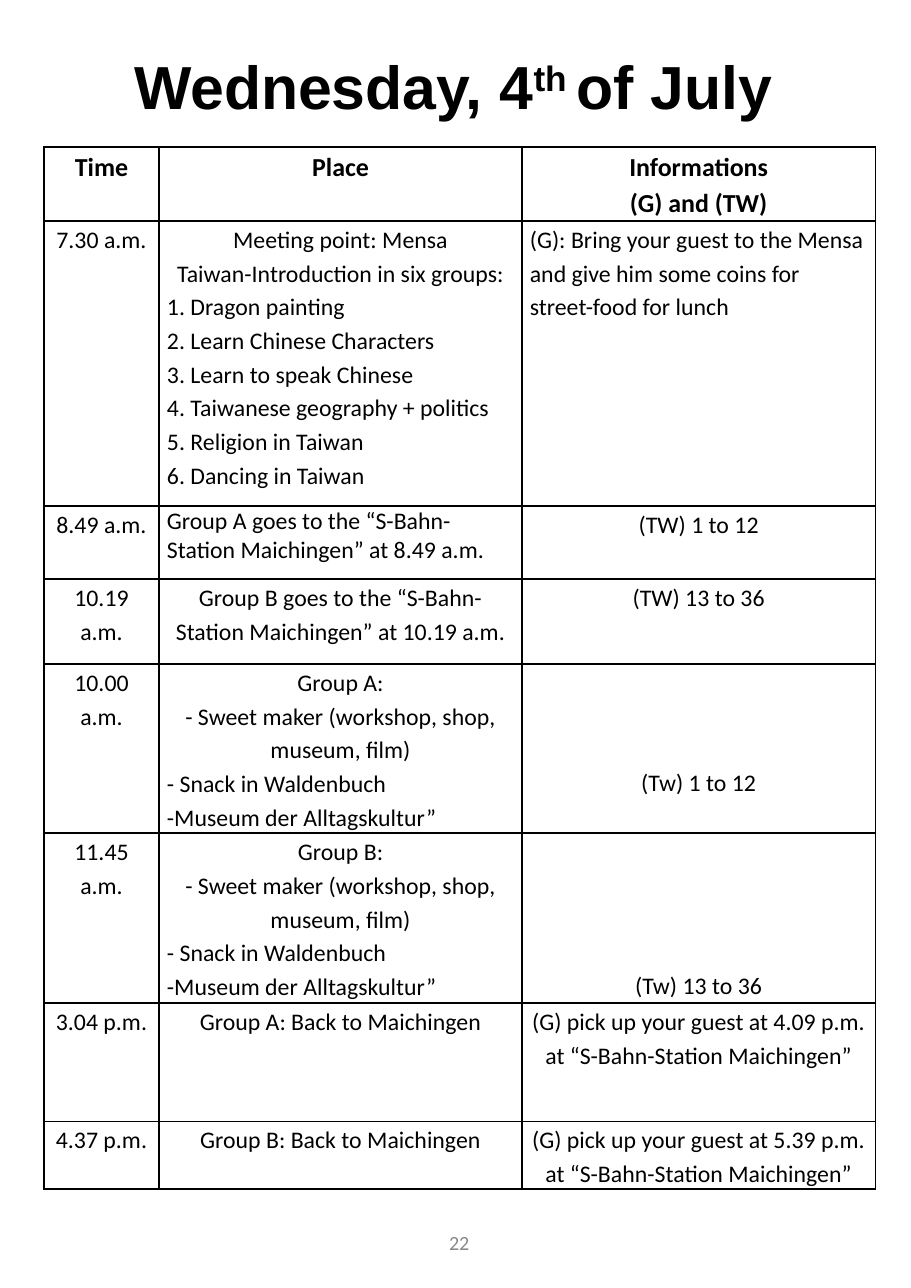
from dataclasses import dataclass

from lxml import etree
from pptx import Presentation
from pptx.dml.color import RGBColor
from pptx.enum.text import MSO_ANCHOR, PP_ALIGN
from pptx.oxml.ns import qn
from pptx.util import Pt

MID, LEFT = PP_ALIGN.CENTER, PP_ALIGN.LEFT
CENTRE = MSO_ANCHOR.MIDDLE


@dataclass(frozen=True)
class Theme:
    ink: str = "000000"
    grey: str = "888888"
    title: float = 28.1
    head: float = 12
    body: float = 11
    page: float = 9.3
    title_font: str = "Arial"
    font: str = "Calibri"
    rule: float = 1


@dataclass(frozen=True)
class Cell:
    """Centred lines, then left lines; skip is the lines left free on top."""
    mid: str = ""
    left: str = ""
    skip: int = 0
    lead: float = 1.15


THEME = Theme()
LINE = 15.45  # height of one body line
COLS = (53.3, 167.8, 163.4)
ROWS = (34.2, 131.8, 33.8, 39.3, 78.2, 78.6, 54.6, 31.4)


def tour(group):
    return Cell(f"Group {group}:\n- Sweet maker (workshop, shop, museum, film)",
                "- Snack in Waldenbuch\n-Museum der Alltagskultur”")


def pickup(time):
    return Cell(f"(G) pick up your guest at {time} p.m. "
                "at “S-Bahn-Station Maichingen”")


PLAN = (
    (Cell("Time"), Cell("Place"), Cell("Informations\n(G) and (TW)")),
    (Cell("7.30 a.m."),
     Cell("Meeting point: Mensa\nTaiwan-Introduction in six groups:",
          "1. Dragon painting\n2. Learn Chinese Characters\n"
          "3. Learn to speak Chinese\n4. Taiwanese geography + politics\n"
          "5. Religion in Taiwan\n6. Dancing in Taiwan"),
     Cell(left="(G): Bring your guest to the Mensa and give him "
               "some coins for street-food for lunch")),
    (Cell("8.49 a.m."),
     Cell(left="Group A goes to the “S-Bahn-Station Maichingen” at 8.49 a.m.",
          lead=1),
     Cell("(TW) 1 to 12")),
    (Cell("10.19 a.m."),
     Cell("Group B goes to the “S-Bahn-Station Maichingen” at 10.19 a.m."),
     Cell("(TW) 13 to 36")),
    (Cell("10.00 a.m."), tour("A"), Cell("(Tw) 1 to 12", skip=3)),
    (Cell("11.45 a.m."), tour("B"), Cell("(Tw) 13 to 36", skip=4)),
    (Cell("3.04 p.m."), Cell("Group A: Back to Maichingen"), pickup("4.09")),
    (Cell("4.37 p.m."), Cell("Group B: Back to Maichingen"), pickup("5.39")),
)


def write(para, text, size=THEME.body, font=THEME.font, color=THEME.ink,
          bold=False, align=MID, lead=1, rise=0):
    para.alignment = align
    para.line_spacing = lead
    run = para.add_run()
    run.text = text
    run.font.size = Pt(size)
    run.font.name = font
    run.font.bold = bold
    run.font.color.rgb = RGBColor.from_string(color)
    if rise:
        run.font._element.set("baseline", str(rise * 1000))


def add_box(slide, x, y, w, h):
    frame = slide.shapes.add_textbox(Pt(x), Pt(y), Pt(w), Pt(h)).text_frame
    frame.word_wrap = True
    frame.vertical_anchor = CENTRE
    return frame.paragraphs[0]


def add_rules(cell):
    props = cell._tc.get_or_add_tcPr()
    for side in ("lnL", "lnR", "lnT", "lnB"):
        line = etree.SubElement(props, qn(f"a:{side}"), w=str(Pt(THEME.rule)))
        fill = etree.SubElement(line, qn("a:solidFill"))
        etree.SubElement(fill, qn("a:srgbClr"), val=THEME.ink)


def fill_cell(cell, data, **style):
    cell.margin_left = cell.margin_right = Pt(3.6)
    cell.margin_top = Pt(data.skip * LINE)
    cell.margin_bottom = 0
    add_rules(cell)
    cell.fill.background()
    lines = [(text, align) for block, align in ((data.mid, MID), (data.left, LEFT))
             if block for text in block.split("\n")]
    frame = cell.text_frame
    for i, (text, align) in enumerate(lines):
        para = frame.add_paragraph() if i else frame.paragraphs[0]
        write(para, text, align=align, lead=data.lead, **style)


def add_plan(slide, x, y):
    table = slide.shapes.add_table(len(ROWS), len(COLS), Pt(x), Pt(y),
                                   Pt(sum(COLS)), Pt(sum(ROWS))).table
    table.first_row = table.horz_banding = False
    for col, width in zip(table.columns, COLS):
        col.width = Pt(width)
    for r, (row, height) in enumerate(zip(table.rows, ROWS)):
        row.height = Pt(height)
        style = {} if r else {"size": THEME.head, "bold": True}
        for cell, data in zip(row.cells, PLAN[r]):
            fill_cell(cell, data, **style)


def main():
    deck = Presentation()
    deck.slide_width, deck.slide_height = Pt(421.2), Pt(595.4)
    slide = deck.slides.add_slide(deck.slide_layouts[6])

    # Title
    title = add_box(slide, 20.2, -7.2, 378.7, 93.6)
    for text, rise in (("Wednesday, 4", 0), ("th ", 30), ("of July", 0)):
        write(title, text, size=THEME.title, font=THEME.title_font,
              bold=True, rise=rise)

    # Day plan
    add_plan(slide, 20.3, 68)

    # Page number
    write(add_box(slide, 163.4, 558.7, 97.9, 31.7), "22",
          size=THEME.page, color=THEME.grey)

    deck.save("out.pptx")


if __name__ == "__main__":
    main()
